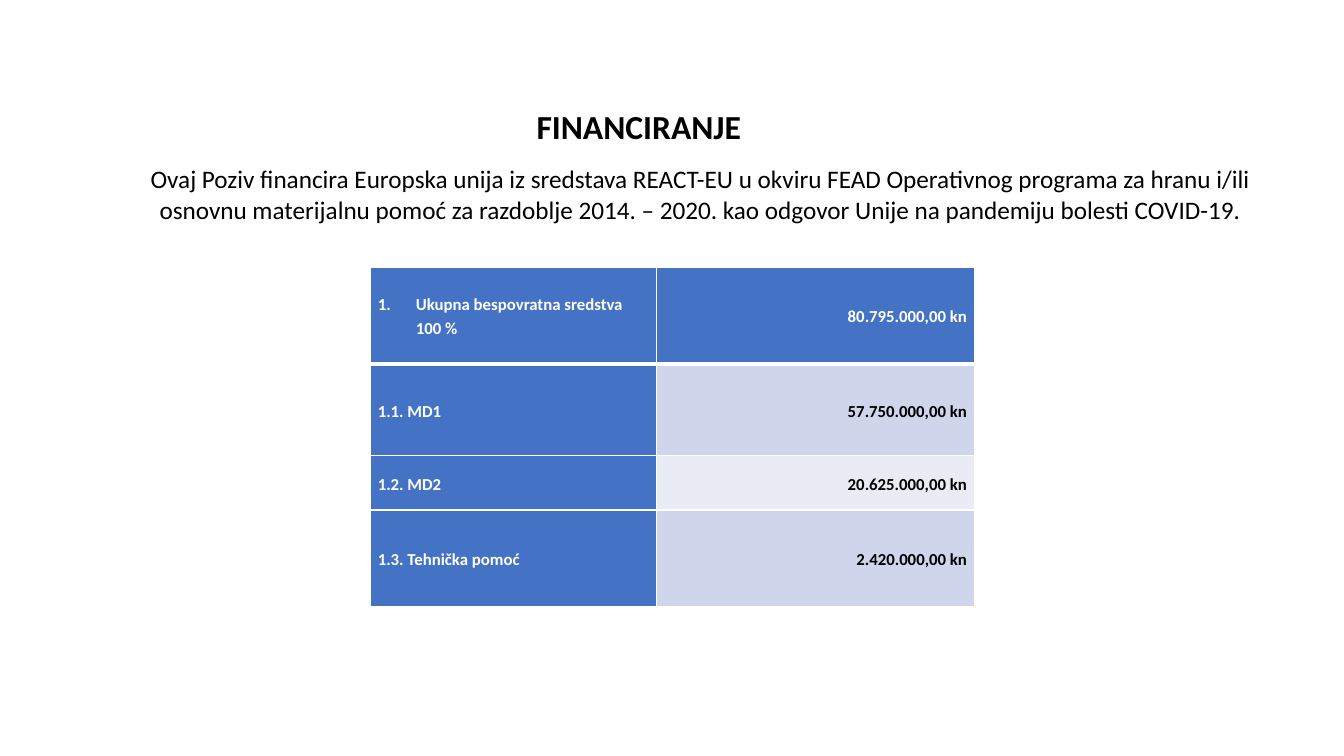
"""Build the financing slide with its heading, introduction and budget table."""
from lxml import etree
from pptx import Presentation
from pptx.dml.color import RGBColor
from pptx.enum import text
from pptx.oxml import ns
from pptx.util import Cm, Pt

COLORS = {"black": "000000", "white": "FFFFFF", "blue": "4472C4",
          "band": "CFD5EA", "light": "E9EBF5"}
FONT = "Calibri"
TITLE = "FINANCIRANJE"
INTRO = [
    "Ovaj Poziv financira Europska unija iz sredstava REACT-EU u okviru FEAD Operativnog programa za hranu i/ili",
    "osnovnu materijalnu pomoć za razdoblje 2014. – 2020. kao odgovor Unije na pandemiju bolesti COVID-19.",
]
BUDGET = [
    ("Ukupna bespovratna sredstva 100 %", "80.795.000,00 kn", 2.44),
    ("1.1. MD1", "57.750.000,00 kn", 2.31),
    ("1.2. MD2", "20.625.000,00 kn", 1.37),
    ("1.3. Tehnička pomoć", "2.420.000,00 kn", 2.44),
]
COLUMNS = (7.21, 8.0)
ALIGN = text.PP_ALIGN


def style(p, size, color, bold, align, spacing):
    p.alignment, p.line_spacing = align, spacing
    for r in p.runs:
        r.font.name, r.font.size, r.font.bold = FONT, Pt(size), bold
        r.font.color.rgb = RGBColor.from_string(COLORS[color])


def add_text(slide, box, lines, size, bold, spacing):
    tf = slide.shapes.add_textbox(*map(Cm, box)).text_frame
    tf.word_wrap = True
    tf.text = "\n".join(lines)
    for p in tf.paragraphs:
        style(p, size, "black", bold, ALIGN.CENTER, spacing)


def add_borders(cell, bottom):
    tc_pr = cell._tc.get_or_add_tcPr()
    widths = {"lnL": 1, "lnR": 1, "lnT": 1, "lnB": bottom}
    for i, (tag, width) in enumerate(widths.items()):
        ln = etree.Element(ns.qn("a:" + tag), w=str(Pt(width)))
        fill = etree.SubElement(ln, ns.qn("a:solidFill"))
        etree.SubElement(fill, ns.qn("a:srgbClr"), val=COLORS["white"])
        tc_pr.insert(i, ln)


def add_number(p):
    p_pr = p._p.get_or_add_pPr()
    p_pr.set("marL", str(Cm(0.96)))
    p_pr.set("indent", str(-Cm(0.96)))
    etree.SubElement(p_pr, ns.qn("a:buFont"), typeface="+mj-lt")
    etree.SubElement(p_pr, ns.qn("a:buAutoNum"), type="arabicPeriod")


def fill_cell(cell, row, col, value):
    header = row == 0
    fill = "blue" if header or col == 0 else "band" if row % 2 else "light"
    cell.fill.solid()
    cell.fill.fore_color.rgb = RGBColor.from_string(COLORS[fill])
    cell.vertical_anchor = text.MSO_ANCHOR.MIDDLE
    cell.margin_left = cell.margin_right = Cm(0.18)
    cell.margin_top = cell.margin_bottom = 0
    add_borders(cell, 3 if header else 1)
    cell.text_frame.text = value
    p = cell.text_frame.paragraphs[0]
    align = ALIGN.RIGHT if col else ALIGN.LEFT if header else ALIGN.JUSTIFY
    style(p, 12, "white" if fill == "blue" else "black", True, align, 1.15)
    if header and col == 0:
        add_number(p)


def add_budget(slide):
    heights = [row[-1] for row in BUDGET]
    frame = slide.shapes.add_table(len(BUDGET), len(COLUMNS), Cm(9.34), Cm(6.73),
                                   Cm(sum(COLUMNS)), Cm(sum(heights)))
    table = frame.table
    for column, width in zip(table.columns, COLUMNS):
        column.width = Cm(width)
    for i, (*values, height) in enumerate(BUDGET):
        table.rows[i].height = Cm(height)
        for j, value in enumerate(values):
            fill_cell(table.cell(i, j), i, j, value)


def main():
    prs = Presentation()
    prs.slide_width, prs.slide_height = Cm(33.87), Cm(19.05)
    slide = prs.slides.add_slide(prs.slide_layouts[6])
    add_text(slide, (4.1, 2.65, 24, 1.2), [TITLE], 24, True, 0.9)
    add_text(slide, (3, 4, 29.3, 1.8), INTRO, 18, False, 1.0)
    add_budget(slide)
    prs.save("out.pptx")


if __name__ == "__main__":
    main()
